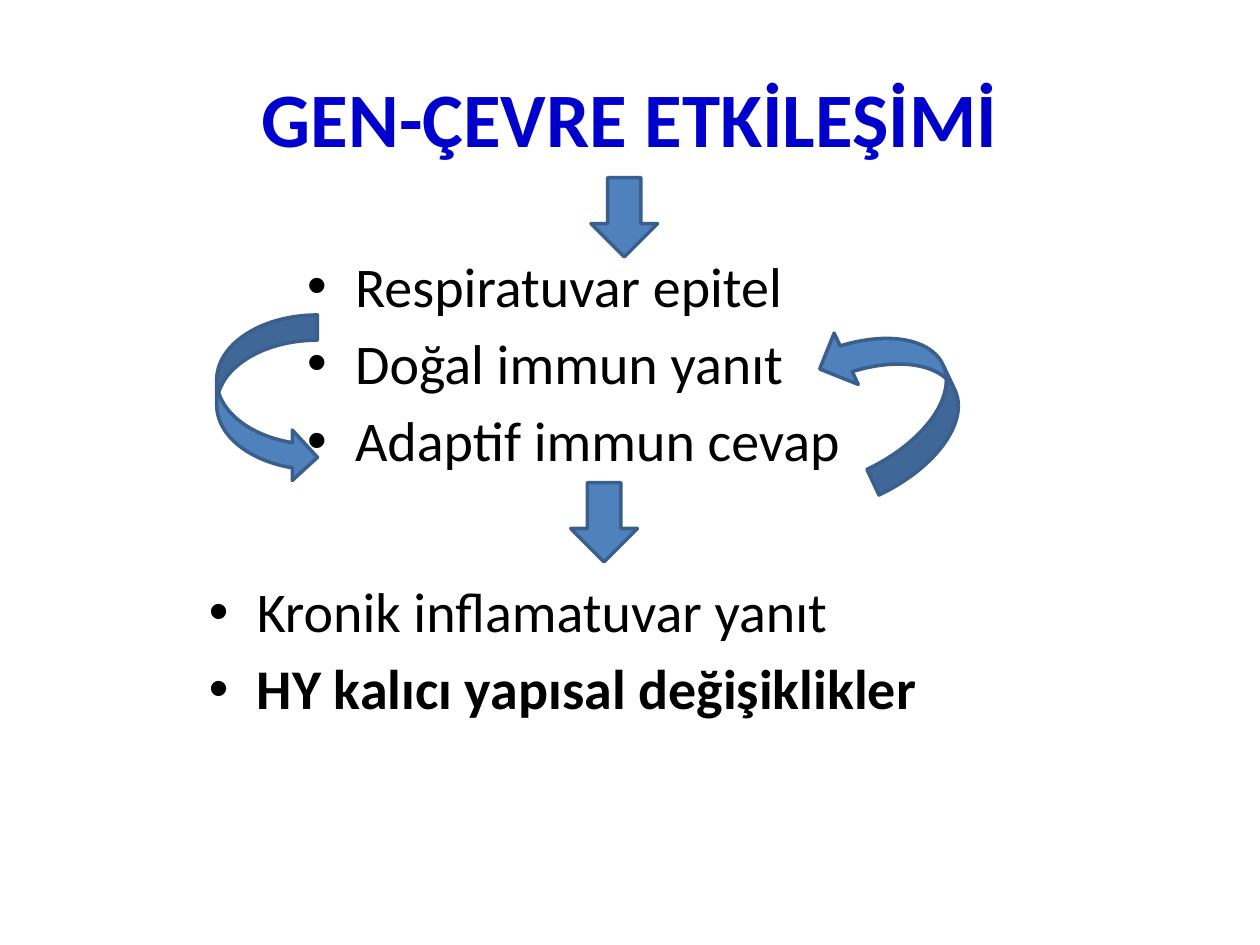
import pptx
import pptx.dml.color
import pptx.enum.shapes
import pptx.enum.text
import pptx.util
import lxml.etree
import pptx.oxml.ns

PX = 9144  # 100 px to the inch
KIND = pptx.enum.shapes.MSO_SHAPE
ALIGN = pptx.enum.text.PP_ALIGN
ANCHOR = pptx.enum.text.MSO_ANCHOR

deck = pptx.Presentation()
deck.slide_width, deck.slide_height = 1000 * PX, 750 * PX
slide = deck.slides.add_slide(deck.slide_layouts[6])


def paint(hue):
    return pptx.dml.color.RGBColor.from_string(hue)


def write(box, lines, size=32, hue="000000", bold=(), align=ALIGN.LEFT,
          anchor=ANCHOR.TOP, dots=True):
    """Add a text box; bold holds the indexes of the bold lines."""
    frame = slide.shapes.add_textbox(*(n * PX for n in box)).text_frame
    frame.word_wrap = True
    frame.vertical_anchor = anchor
    for i, line in enumerate(lines):
        para = frame.paragraphs[0] if i == 0 else frame.add_paragraph()
        para.alignment = align
        run = para.add_run()
        run.text = line
        run.font.name = "Calibri"
        run.font.size = pptx.util.Pt(size)
        run.font.bold = i in bold
        run.font.color.rgb = paint(hue)
        if dots:
            para.space_before = pptx.util.Pt(5.6)
            props = para._p.get_or_add_pPr()
            props.set("marL", str(38 * PX))
            props.set("indent", str(-38 * PX))
            font = lxml.etree.SubElement(props, pptx.oxml.ns.qn("a:buFont"))
            font.set("typeface", "Arial")
            mark = lxml.etree.SubElement(props, pptx.oxml.ns.qn("a:buChar"))
            mark.set("char", "•")


write((50, 30, 900, 125), ["GEN-ÇEVRE ETKİLEŞİMİ"], size=44, hue="0000CC",
      bold=(0,), align=ALIGN.CENTER, anchor=ANCHOR.MIDDLE, dots=False)
write((234, 195, 570, 203),
      ["Respiratuvar epitel", "Doğal immun yanıt", "Adaptif immun cevap"])

arrows = [
    (KIND.DOWN_ARROW, (469, 141, 53, 63), 0, False),
    (KIND.CURVED_LEFT_ARROW, (665, 247, 90, 133), 154.8, True),
    (KIND.CURVED_RIGHT_ARROW, (172, 250, 80, 133), 0, False),
    (KIND.DOWN_ARROW, (453, 383, 53, 63), 0, False),
]
for kind, box, turn, flip in arrows:
    arrow = slide.shapes.add_shape(kind, *(n * PX for n in box))
    arrow.shadow.inherit = False
    arrow.fill.solid()
    arrow.fill.fore_color.rgb = paint("4F81BD")
    arrow.line.color.rgb = paint("3A5F8C")
    arrow.line.width = pptx.util.Pt(2)
    arrow.rotation = turn
    if flip:
        arrow._element.spPr.xfrm.set("flipH", "1")

write((156, 453, 656, 203),
      ["Kronik inflamatuvar yanıt", "HY kalıcı yapısal değişiklikler"],
      bold=(1,))

deck.save("out.pptx")
